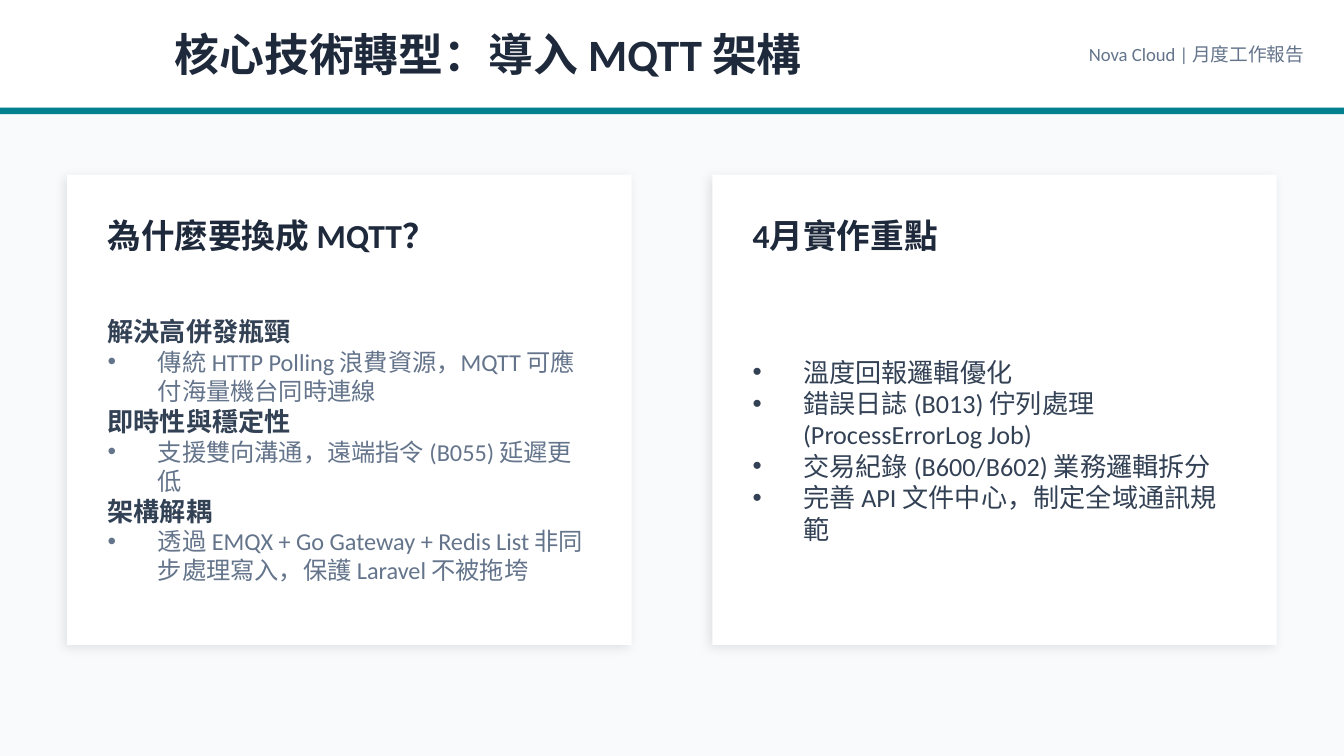
import dataclasses
import pptx
import pptx.util
import pptx.dml.color
import pptx.enum.shapes
import pptx.enum.text
import pptx.oxml
import pptx.oxml.ns

PX = 4572  # EMU per px, 200 px to the inch
ALIGN = pptx.enum.text.PP_ALIGN


@dataclasses.dataclass
class Theme:
    font: str = "Calibri"
    back: str = "F8FAFC"
    white: str = "FFFFFF"
    teal: str = "028090"
    dark: str = "1E293B"
    slate: str = "334155"
    grey: str = "64748B"
    title: int = 24
    head: int = 18
    body: int = 14
    note: int = 13
    small: int = 10


def rgb(code):
    return pptx.dml.color.RGBColor.from_string(code)


class Deck:
    def __init__(self, theme):
        self.theme = theme
        self.file = pptx.Presentation()
        self.file.slide_width = 2000 * PX
        self.file.slide_height = 1125 * PX
        self.slide = self.file.slides.add_slide(self.file.slide_layouts[4])
        fill = self.slide.background.fill
        fill.solid()
        fill.fore_color.rgb = rgb(theme.back)

    def rect(self, x, y, w, h, color):
        kind = pptx.enum.shapes.MSO_SHAPE.RECTANGLE
        shape = self.slide.shapes.add_shape(kind, x * PX, y * PX, w * PX, h * PX)
        shape.shadow.inherit = False
        shape.fill.solid()
        shape.fill.fore_color.rgb = rgb(color)
        shape.line.fill.background()
        return shape

    def card(self, x, y, w, h):
        shape = self.rect(x, y, w, h, self.theme.white)
        effects = shape._element.spPr.find(pptx.oxml.ns.qn("a:effectLst"))
        effects.append(pptx.oxml.parse_xml(
            f'<a:outerShdw {pptx.oxml.ns.nsdecls("a")} blurRad="76200" dist="25400"'
            ' dir="8100000" algn="bl" rotWithShape="0"><a:srgbClr val="000000">'
            '<a:alpha val="10000"/></a:srgbClr></a:outerShdw>'))

    def label(self, x, y, w, h, text, size, color, align):
        box = self.slide.shapes.add_textbox(x * PX, y * PX, w * PX, h * PX)
        self.set_text(box.text_frame, [(text, size, color, False, False)], align)

    def place(self, slot, x, y, w, h, lines):
        """Move a placeholder above the cards and fill it."""
        box = self.slide.placeholders[slot]
        box.left, box.top, box.width, box.height = x * PX, y * PX, w * PX, h * PX
        self.slide.shapes._spTree.append(box._element)
        self.set_text(box.text_frame, lines)
        return box.text_frame

    def set_text(self, frame, lines, align=ALIGN.LEFT):
        frame.word_wrap = True
        frame.auto_size = pptx.enum.text.MSO_AUTO_SIZE.NONE
        frame.vertical_anchor = pptx.enum.text.MSO_ANCHOR.MIDDLE
        frame.text = "\n".join(line[0] for line in lines)
        for para, (_, size, color, bold, dot) in zip(frame.paragraphs, lines):
            self.bullet(para, dot)
            para.alignment = align
            para.space_before = pptx.util.Pt(0)
            for run in para.runs:
                run.font.name = self.theme.font
                run.font.size = pptx.util.Pt(size)
                run.font.bold = bold
                run.font.color.rgb = rgb(color)

    def bullet(self, para, dot):
        props = para._p.get_or_add_pPr()
        dent = 75 * PX if dot else 0
        props.set("marL", str(dent))
        props.set("indent", str(-dent))
        tag = 'buChar char="•"' if dot else "buNone"
        name = pptx.oxml.ns.nsdecls("a")
        props.append(pptx.oxml.parse_xml(f"<a:{tag} {name}/>"))


def main():
    theme = Theme()
    deck = Deck(theme)

    # Header band
    deck.rect(0, 0, 2000, 160, theme.white)
    deck.rect(0, 160, 2000, 10, theme.teal)
    deck.label(1600, 40, 360, 80, "Nova Cloud | 月度工作報告",
               theme.small, theme.grey, ALIGN.RIGHT)
    title = deck.place(0, 260, 20, 1600, 120, [
        ("核心技術轉型：導入 MQTT 架構", theme.title, theme.dark, True, False)])
    title.margin_left = title.margin_right = 0
    title.margin_top = title.margin_bottom = 0

    # Reasons, each with one detail
    reasons = [
        ("解決高併發瓶頸", "傳統 HTTP Polling 浪費資源，MQTT 可應付海量機台同時連線"),
        ("即時性與穩定性", "支援雙向溝通，遠端指令 (B055) 延遲更低"),
        ("架構解耦", "透過 EMQX + Go Gateway + Redis List 非同步處理寫入，保護 Laravel 不被拖垮"),
    ]
    why = []
    for point, note in reasons:
        why.append((point, theme.body, theme.slate, True, False))
        why.append((note, theme.note, theme.grey, False, True))

    # Tasks for April
    tasks = ["溫度回報邏輯優化", "錯誤日誌 (B013) 佇列處理 (ProcessErrorLog Job)",
             "交易紀錄 (B600/B602) 業務邏輯拆分", "完善 API 文件中心，制定全域通訊規範"]
    todo = [(task, theme.body, theme.slate, False, True) for task in tasks]

    # Two cards, each with a heading and a list
    cards = [("為什麼要換成 MQTT？", why), ("4月實作重點", todo)]
    for i, (head, lines) in enumerate(cards):
        x = 100 + 960 * i
        deck.card(x, 260, 840, 700)
        deck.place(1 + 2 * i, x + 40, 300, 760, 100,
                   [(head, theme.head, theme.dark, True, False)])
        deck.place(2 + 2 * i, x + 40, 420, 760, 500, lines)

    deck.file.save("out.pptx")


if __name__ == "__main__":
    main()
